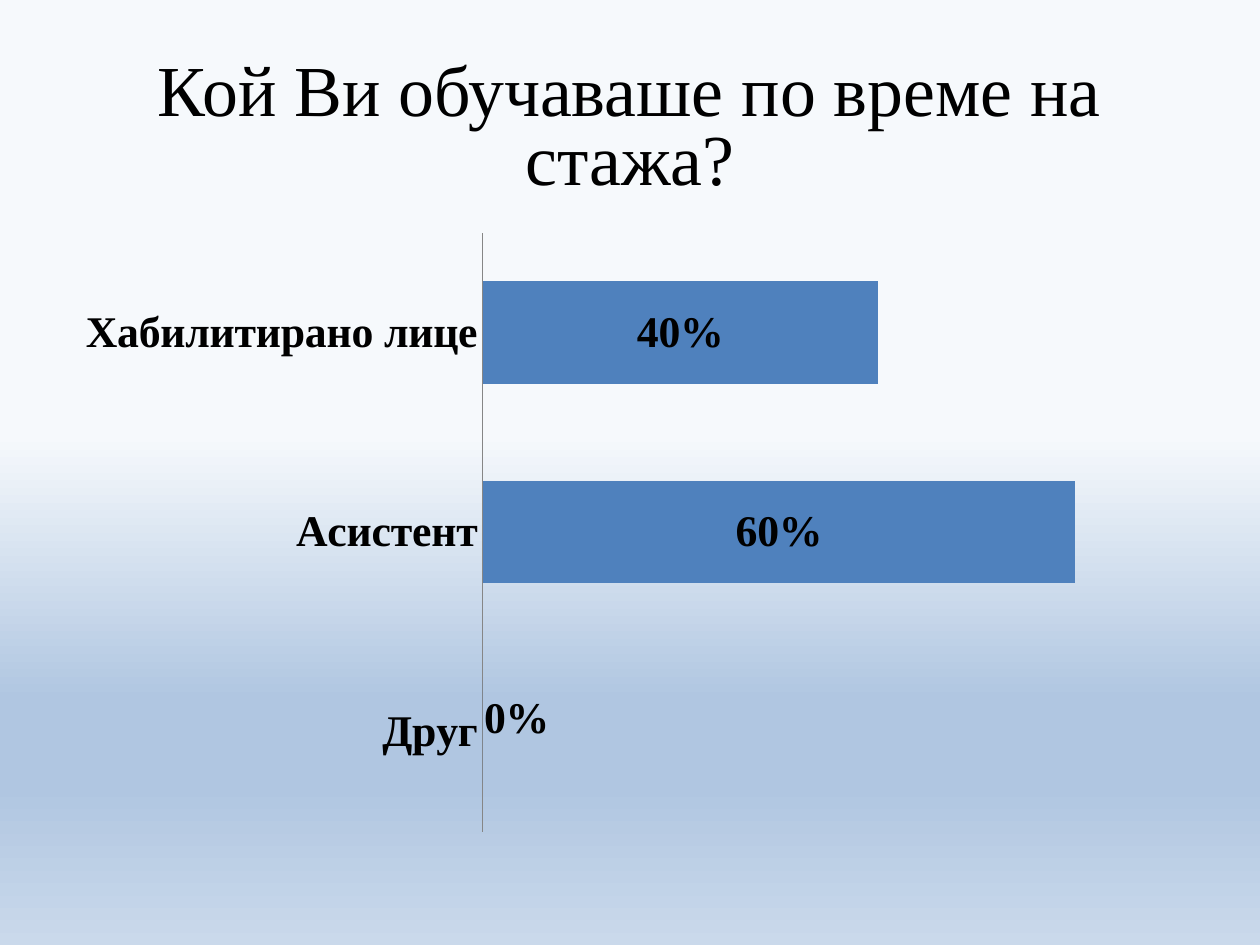
import pptx
import pptx.chart.data
import pptx.dml.color
import pptx.enum.chart
import pptx.enum.text
import pptx.oxml
import pptx.oxml.ns
import pptx.util

BLACK = pptx.dml.color.RGBColor(0x00, 0x00, 0x00)
AXIS_GREY = pptx.dml.color.RGBColor(0x86, 0x86, 0x86)
BAR_BLUE = pptx.dml.color.RGBColor(0x4F, 0x81, 0xBD)
PALE = pptx.dml.color.RGBColor(0xF6, 0xF9, 0xFC)
MIST = pptx.dml.color.RGBColor(0xB0, 0xC6, 0xE1)
SKY = pptx.dml.color.RGBColor(0xCA, 0xD9, 0xEB)

PIXELS_PER_INCH = 100
TITLE_FORMAT = {"name": "Times New Roman", "size": pptx.util.Pt(44)}
LABEL_FORMAT = {"name": "Times New Roman", "size": pptx.util.Pt(25), "bold": True}
CHART_FORMAT = {"name": "Calibri", "size": pptx.util.Pt(18)}


def px(length):
    return pptx.util.Emu(length * 914400 // PIXELS_PER_INCH)


def set_attributes(target, values):
    for name, value in values.items():
        setattr(target, name, value)


def manual_layout(values):
    parts = "".join(f'<c:{name} val="{value}"/>' for name, value in values.items())
    return pptx.oxml.parse_xml(
        f'<c:layout {pptx.oxml.ns.nsdecls("c")}>'
        f"<c:manualLayout>{parts}</c:manualLayout></c:layout>"
    )


class SlideBuilder:
    def __init__(self, presentation, text_color):
        self.text_color = text_color
        self.slide = presentation.slides.add_slide(presentation.slide_layouts[5])

    def style_font(self, font, values):
        set_attributes(font, values)
        font.color.rgb = self.text_color

    def place(self, shape, left, top, width, height):
        box = {"left": left, "top": top, "width": width, "height": height}
        set_attributes(shape, {name: px(length) for name, length in box.items()})

    def background(self, stops, angle):
        fill = self.slide.background.fill
        fill.gradient()
        gradient = self.slide.background._cSld.find(".//" + pptx.oxml.ns.qn("a:gradFill"))
        stop_xml = "".join(
            f'<a:gs pos="{percent * 1000}"><a:srgbClr val="{color}"/></a:gs>'
            for percent, color in stops
        )
        for child in list(gradient):
            gradient.remove(child)
        namespace = pptx.oxml.ns.nsdecls("a")
        gradient.append(pptx.oxml.parse_xml(f"<a:gsLst {namespace}>{stop_xml}</a:gsLst>"))
        gradient.append(
            pptx.oxml.parse_xml(f'<a:lin {namespace} ang="{angle * 60000}" scaled="0"/>')
        )

    def title(self, text, box, font_scale):
        title = self.slide.shapes.title
        self.place(title, *box)
        frame = title.text_frame
        frame.text = text
        set_attributes(frame, {
            "word_wrap": True,
            "vertical_anchor": pptx.enum.text.MSO_ANCHOR.MIDDLE,
            "auto_size": pptx.enum.text.MSO_AUTO_SIZE.TEXT_TO_FIT_SHAPE,
        })
        autofit = frame._txBody.bodyPr.find(pptx.oxml.ns.qn("a:normAutofit"))
        autofit.set("fontScale", str(font_scale * 1000))
        paragraph = frame.paragraphs[0]
        paragraph.alignment = pptx.enum.text.PP_ALIGN.CENTER
        self.style_font(paragraph.runs[0].font, TITLE_FORMAT)

    def bar_chart(self, shares, box, maximum, plot_layout):
        data = pptx.chart.data.CategoryChartData(number_format="0%")
        data.categories = list(shares)
        data.add_series("Series 1", list(shares.values()))
        chart = self.slide.shapes.add_chart(
            pptx.enum.chart.XL_CHART_TYPE.BAR_STACKED, *map(px, box), data
        ).chart
        set_attributes(chart, {"has_legend": False, "has_title": False})
        self.style_font(chart.font, CHART_FORMAT)

        no_ticks = pptx.enum.chart.XL_TICK_MARK.NONE
        categories = chart.category_axis
        set_attributes(categories, {"major_tick_mark": no_ticks, "minor_tick_mark": no_ticks})
        self.style_font(categories.tick_labels.font, LABEL_FORMAT)
        categories.format.line.color.rgb = AXIS_GREY
        categories.format.line.width = pptx.util.Pt(0.75)
        set_attributes(chart.value_axis, {
            "visible": False, "has_major_gridlines": False,
            "minimum_scale": 0, "maximum_scale": maximum,
        })

        plot = chart.plots[0]
        set_attributes(plot, {"gap_width": 95, "overlap": 100, "vary_by_categories": False})
        series = plot.series[0]
        series.format.fill.solid()
        series.format.fill.fore_color.rgb = BAR_BLUE
        labels = series.data_labels
        set_attributes(labels, {
            "show_value": True, "number_format": "0%", "number_format_is_linked": False,
        })
        self.style_font(labels.font, LABEL_FORMAT)

        plot_area = chart._chartSpace.chart.plotArea
        for layout in plot_area.findall(pptx.oxml.ns.qn("c:layout")):
            plot_area.remove(layout)
        plot_area.insert(0, manual_layout(plot_layout))
        return series

    def shift_label(self, series, index, x, y):
        self.style_font(series.points[index].data_label.font, LABEL_FORMAT)
        label = series._element.find(".//" + pptx.oxml.ns.qn("c:dLbl"))
        label.insert(1, manual_layout({"x": x, "y": y}))


def main():
    presentation = pptx.Presentation()
    set_attributes(presentation, {"slide_width": px(1000), "slide_height": px(750)})
    builder = SlideBuilder(presentation, BLACK)
    builder.background([(46, PALE), (74, MIST), (83, MIST), (100, SKY)], 90)
    builder.title("Кой Ви обучаваше по време на стажа?", (50, 30, 900, 125), 90)
    shares = {"Друг": 0, "Асистент": 0.6, "Хабилитирано лице": 0.4}
    plot_layout = {
        "layoutTarget": "inner", "xMode": "edge", "yMode": "edge",
        "x": 0.37, "y": 0.02, "w": 0.61, "h": 0.96,
    }
    series = builder.bar_chart(shares, (50, 175, 900, 495), 0.7, plot_layout)
    builder.shift_label(series, 0, 0.03, -0.02)
    presentation.save("out.pptx")


if __name__ == "__main__":
    main()
